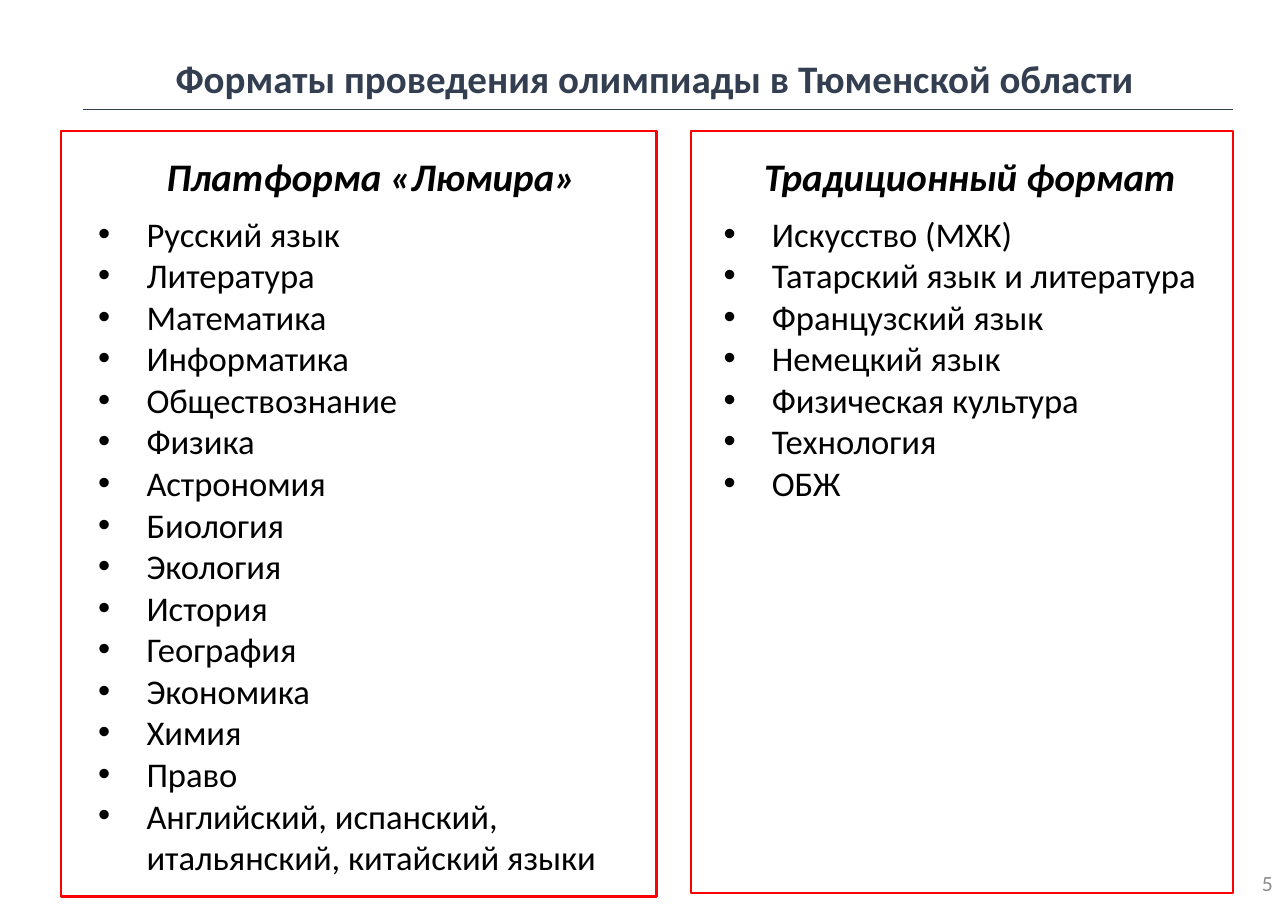
"""Builds the slide on the olympiad formats in the Tyumen region."""
from dataclasses import dataclass

from lxml.etree import SubElement
from pptx import Presentation
from pptx.dml.color import RGBColor
from pptx.enum.shapes import MSO_CONNECTOR, MSO_SHAPE
from pptx.enum.text import MSO_ANCHOR, MSO_AUTO_SIZE, PP_ALIGN
from pptx.oxml.ns import qn
from pptx.util import Pt

EMU_PER_PX = 9144
TWO_CONTENT_LAYOUT = 3
BULLET_INDENT = 31
NAVY, RED, WHITE, BLACK, GRAY = "333F50", "FF0000", "FFFFFF", "000000", "8C8C8C"


@dataclass(frozen=True)
class Box:
    left: int
    top: int
    width: int
    height: int


@dataclass(frozen=True)
class Format:
    heading: str
    subjects: tuple[str, ...]
    frame: Box
    text: Box


FORMATS = (
    Format(
        "Платформа «Люмира»",
        ("Русский язык", "Литература", "Математика", "Информатика",
         "Обществознание", "Физика", "Астрономия", "Биология", "Экология",
         "История", "География", "Экономика", "Химия", "Право",
         "Английский, испанский, итальянский, китайский языки"),
        Box(39, 84, 382, 491),
        Box(53, 93, 370, 480),
    ),
    Format(
        "Традиционный формат",
        ("Искусство (МХК)", "Татарский язык и литература", "Французский язык",
         "Немецкий язык", "Физическая культура", "Технология", "ОБЖ"),
        Box(443, 84, 348, 489),
        Box(454, 93, 336, 480),
    ),
)


def px(length: int) -> int:
    return length * EMU_PER_PX


def color(value: str) -> RGBColor:
    return RGBColor.from_string(value)


def place(shape, box: Box) -> None:
    shape.left, shape.top = px(box.left), px(box.top)
    shape.width, shape.height = px(box.width), px(box.height)


def style(paragraph, size: int, ink: str, align: PP_ALIGN,
          bold: bool = False, italic: bool = False) -> None:
    paragraph.alignment = align
    paragraph.space_before = Pt(0)
    font = paragraph.font
    font.name, font.size, font.bold, font.italic = "Calibri", Pt(size), bold, italic
    font.color.rgb = color(ink)


def set_bullet(paragraph, indent: int) -> None:
    properties = paragraph._p.get_or_add_pPr()
    properties.set("marL", str(px(indent)))
    properties.set("indent", str(-px(indent)))
    if indent:
        SubElement(properties, qn("a:buFont"), typeface="Arial")
        SubElement(properties, qn("a:buChar"), char="•")
    else:
        SubElement(properties, qn("a:buNone"))


def draw_title(title, text: str) -> None:
    place(title, Box(53, 35, 734, 30))
    frame = title.text_frame
    frame.margin_left = frame.margin_right = frame.margin_top = frame.margin_bottom = 0
    frame.vertical_anchor = MSO_ANCHOR.MIDDLE
    frame.auto_size = MSO_AUTO_SIZE.NONE
    frame.text = text
    style(frame.paragraphs[0], 18, NAVY, PP_ALIGN.CENTER, bold=True)


def draw_rule(slide) -> None:
    rule = slide.shapes.add_connector(
        MSO_CONNECTOR.STRAIGHT, px(53), px(70), px(791), px(70))
    rule.line.color.rgb = color(NAVY)
    rule.line.width = Pt(0.5)
    SubElement(rule._element.spPr, qn("a:effectLst"))


def draw_format(slide, body, item: Format) -> None:
    frame = slide.shapes.add_shape(MSO_SHAPE.RECTANGLE, 0, 0, 0, 0)
    place(frame, item.frame)
    frame.shadow.inherit = False
    frame.fill.solid()
    frame.fill.fore_color.rgb = color(WHITE)
    frame.line.color.rgb = color(RED)
    frame.line.width = Pt(1)
    body.element.addprevious(frame.element)

    place(body, item.text)
    body.text_frame.auto_size = MSO_AUTO_SIZE.NONE
    body.text_frame.text = "\n".join((item.heading, *item.subjects))
    heading, *subjects = body.text_frame.paragraphs
    set_bullet(heading, 0)
    style(heading, 18, BLACK, PP_ALIGN.CENTER, bold=True, italic=True)
    heading.space_after = Pt(6)
    for subject in subjects:
        set_bullet(subject, BULLET_INDENT)
        style(subject, 16, BLACK, PP_ALIGN.LEFT)


def draw_page_number(slide, number: str) -> None:
    page = slide.shapes.add_textbox(px(779), px(551), px(47), px(31))
    page.text_frame.word_wrap = True
    page.text_frame.vertical_anchor = MSO_ANCHOR.MIDDLE
    page.text_frame.text = number
    style(page.text_frame.paragraphs[0], 10, GRAY, PP_ALIGN.RIGHT)


def main() -> None:
    deck = Presentation()
    deck.slide_width, deck.slide_height = px(826), px(583)
    slide = deck.slides.add_slide(deck.slide_layouts[TWO_CONTENT_LAYOUT])
    title, *bodies = slide.placeholders
    draw_title(title, "Форматы проведения олимпиады в Тюменской области")
    draw_rule(slide)
    for body, item in zip(bodies, FORMATS):
        draw_format(slide, body, item)
    draw_page_number(slide, "5")
    deck.save("out.pptx")


if __name__ == "__main__":
    main()
